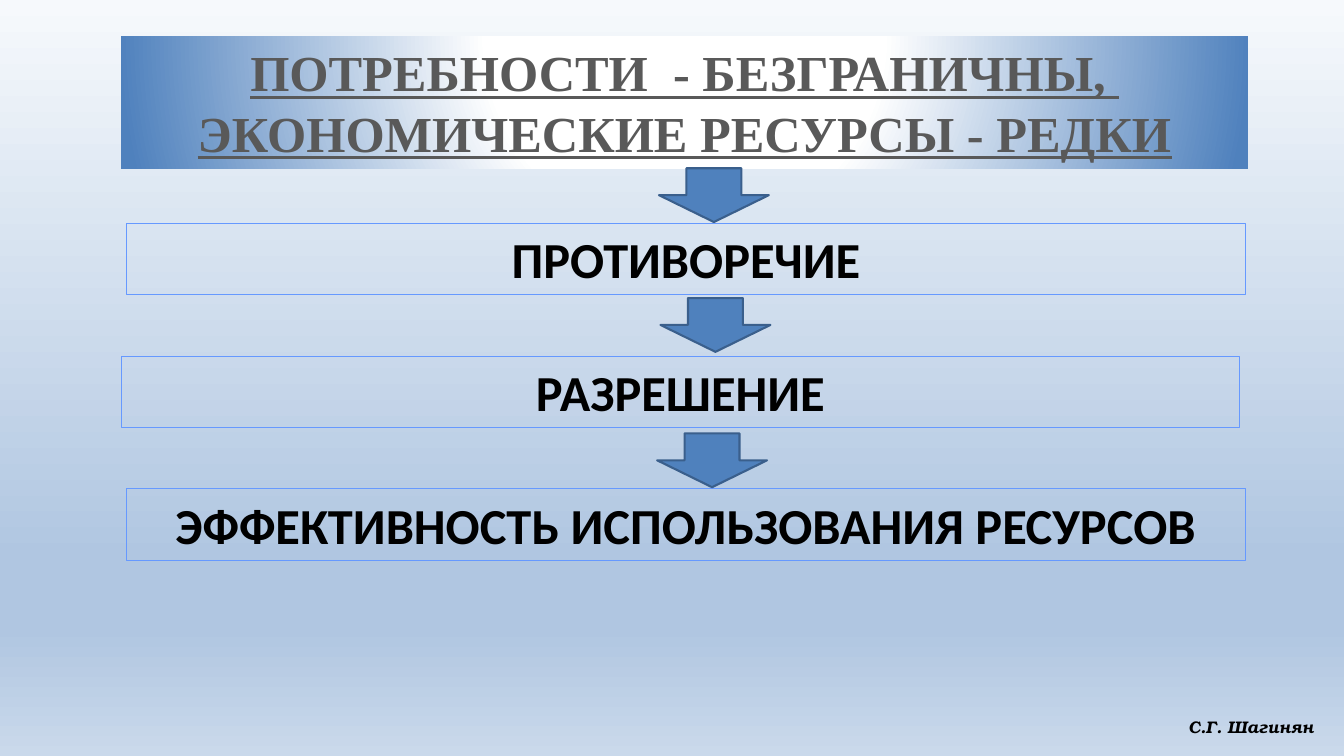
from lxml.etree import SubElement
from pptx import Presentation
from pptx.dml.color import RGBColor
from pptx.enum.shapes import MSO_SHAPE
from pptx.enum.text import MSO_ANCHOR, MSO_AUTO_SIZE, PP_ALIGN
from pptx.oxml.ns import qn
from pptx.util import Pt

COLORS = {
    "blue": "4F81BD", "arrow_line": "3A5F8C", "box_line": "6699FF",
    "white": "FFFFFF", "title": "595959", "text": "000000",
    "sky_top": "F6F9FC", "sky_mid": "B0C6E1", "sky_bottom": "CAD9EB",
}
TITLE = {"name": "Times New Roman", "size": Pt(36), "bold": True, "underline": True}
STEP = {"name": "Calibri", "size": Pt(36), "bold": True}
AUTHOR = {"name": "TeX Gyre Bonum", "size": Pt(12), "bold": True, "italic": True}

STEPS = [
    (90.5, "ПРОТИВОРЕЧИЕ"),
    (86.6, "РАЗРЕШЕНИЕ"),
    (90.5, "ЭФФЕКТИВНОСТЬ ИСПОЛЬЗОВАНИЯ РЕСУРСОВ"),
]
STEP_TOP, STEP_PITCH = 159.6, 94.8
ARROWS = [(470.7, 120.2), (471.8, 212.9), (469.4, 309.6)]


def rgb(color):
    """Return the named colour."""
    return RGBColor.from_string(COLORS[color])


def set_gradient(fill, parent, stops, direction, **attrs):
    """Give a fill the (percent, colour) stops and a linear or circular direction."""
    fill.gradient()
    grad = next(parent.iter(qn("a:gradFill")))
    for child in list(grad):
        grad.remove(child)
    gs_list = SubElement(grad, qn("a:gsLst"))
    for pos, color in stops:
        gs = SubElement(gs_list, qn("a:gs"), pos=str(pos * 1000))
        SubElement(gs, qn("a:srgbClr"), val=COLORS[color])
    if direction == "linear":
        SubElement(grad, qn("a:lin"), scaled="0", **attrs)
    else:
        path = SubElement(grad, qn("a:path"), path=direction)
        SubElement(path, qn("a:fillToRect"), **attrs)


def add_text(sp, lines, font, color, align=PP_ALIGN.CENTER):
    """Write the lines as paragraphs with one font."""
    tf = sp.text_frame
    tf.word_wrap = True
    tf.auto_size = MSO_AUTO_SIZE.SHAPE_TO_FIT_TEXT
    tf.vertical_anchor = MSO_ANCHOR.TOP
    for i, line in enumerate(lines):
        p = tf.paragraphs[0] if i == 0 else tf.add_paragraph()
        p.alignment = align
        r = p.add_run()
        r.text = line
        for name, value in font.items():
            setattr(r.font, name, value)
        r.font.color.rgb = rgb(color)


def add_shape(s, kind, box, fill=None, line=None, width=0.75):
    """Add a flat preset shape with optional fill and outline."""
    sp = s.shapes.add_shape(kind, *map(Pt, box))
    sp.shadow.inherit = False
    if fill:
        sp.fill.solid()
        sp.fill.fore_color.rgb = rgb(fill)
    else:
        sp.fill.background()
    if line:
        sp.line.color.rgb = rgb(line)
        sp.line.width = Pt(width)
    else:
        sp.line.fill.background()
    return sp


def add_title(s, lines):
    """Add the banner that is white in the middle and blue at both ends."""
    sp = add_shape(s, MSO_SHAPE.RECTANGLE, (86.6, 26, 805, 94.5))
    stops = [(0, "white"), (35, "white"), (100, "blue")]
    set_gradient(sp.fill, sp._element, stops, "circle",
                 l="50000", t="-80000", r="50000", b="180000")
    add_text(sp, lines, TITLE, "title")


def add_step(s, left, top, text):
    """Add one outlined step box."""
    sp = add_shape(s, MSO_SHAPE.RECTANGLE, (left, top, 799, 51), line="box_line")
    add_text(sp, [text], STEP, "text")


def add_arrow(s, left, top):
    """Add a block arrow pointing down."""
    add_shape(s, MSO_SHAPE.DOWN_ARROW, (left, top, 78.5, 38.4), "blue", "arrow_line", 1.5)


def add_author(s, name):
    """Add the author's name in the lower right corner."""
    sp = s.shapes.add_textbox(Pt(841.7), Pt(508.3), Pt(110), Pt(21.6))
    add_text(sp, [name], AUTHOR, "text", PP_ALIGN.LEFT)


def main():
    """Build and save the slide."""
    prs = Presentation()
    prs.slide_width, prs.slide_height = Pt(960), Pt(540)
    s = prs.slides.add_slide(prs.slide_layouts[6])
    sky = [(0, "sky_top"), (74, "sky_mid"), (83, "sky_mid"), (100, "sky_bottom")]
    set_gradient(s.background.fill, s._element, sky, "linear", ang="5400000")
    add_title(s, ["ПОТРЕБНОСТИ  - БЕЗГРАНИЧНЫ, ", "ЭКОНОМИЧЕСКИЕ РЕСУРСЫ - РЕДКИ"])
    add_author(s, "С.Г. Шагинян")
    for i, (left, text) in enumerate(STEPS):
        add_step(s, left, STEP_TOP + i * STEP_PITCH, text)
    for left, top in ARROWS:
        add_arrow(s, left, top)
    prs.save("out.pptx")


if __name__ == "__main__":
    main()
